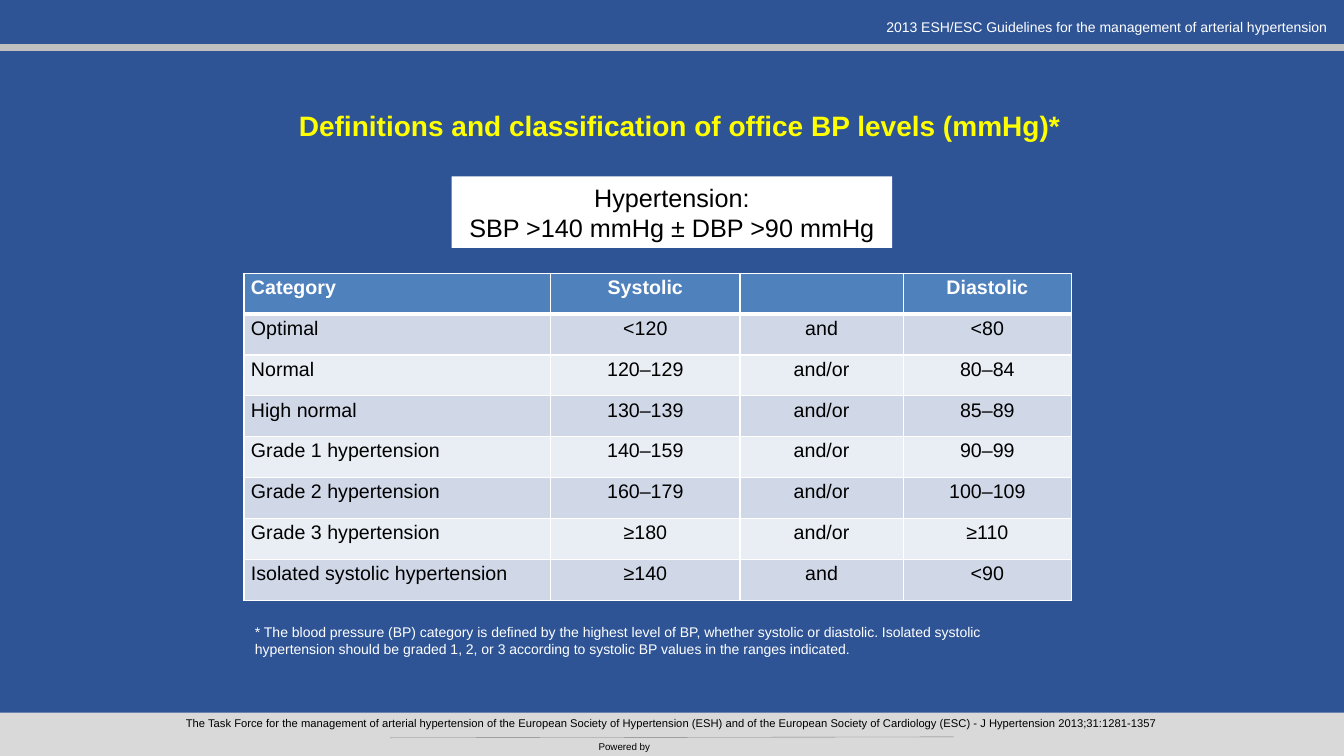
"""Slide with the definitions and classification of office blood pressure levels."""
from lxml import etree
from pptx import Presentation
from pptx.dml.color import RGBColor
from pptx.enum.shapes import MSO_CONNECTOR, MSO_SHAPE
from pptx.enum.text import MSO_ANCHOR, PP_ALIGN
from pptx.oxml.ns import qn
from pptx.util import Inches, Pt

LEFT, CENTER, RIGHT = PP_ALIGN.LEFT, PP_ALIGN.CENTER, PP_ALIGN.RIGHT
TOP, MIDDLE = MSO_ANCHOR.TOP, MSO_ANCHOR.MIDDLE
RECTANGLE, STRAIGHT = MSO_SHAPE.RECTANGLE, MSO_CONNECTOR.STRAIGHT
TITLE_ONLY = 5

NAVY = RGBColor(0x2E, 0x54, 0x96)
WHITE = RGBColor(0xFF, 0xFF, 0xFF)
BLACK = RGBColor(0x00, 0x00, 0x00)
YELLOW = RGBColor(0xFF, 0xFF, 0x00)
FOOTER_GREY = RGBColor(0xD9, 0xD9, 0xD9)
RULE_GREY = RGBColor(0xBF, 0xBF, 0xBF)
HAIRLINE_GREY = RGBColor(0x80, 0x80, 0x80)
HEADER_BLUE = RGBColor(0x4F, 0x81, 0xBD)
BAND_DARK = RGBColor(0xD0, 0xD8, 0xE8)
BAND_LIGHT = RGBColor(0xE9, 0xED, 0xF4)

deck = Presentation()
deck.slide_width, deck.slide_height = Inches(13.33), Inches(7.5)
COL, ROW = deck.slide_width / 100, deck.slide_height / 100
slide = deck.slides.add_slide(deck.slide_layouts[TITLE_ONLY])
slide.background.fill.solid()
slide.background.fill.fore_color.rgb = NAVY


def area(left, top, width, height):
    """Turn percentages of the slide into a position and size."""
    return int(left * COL), int(top * ROW), int(width * COL), int(height * ROW)


def write(frame, lines, size, color, align=LEFT, bold=False, spacing=1.0):
    """Fill a text frame with one paragraph per line."""
    formats = {"name": "Arial", "size": Pt(size), "bold": bold}
    for number, line in enumerate(lines):
        paragraph = frame.add_paragraph() if number else frame.paragraphs[0]
        paragraph.alignment, paragraph.line_spacing = align, spacing
        run = paragraph.add_run()
        run.text = line
        run.font.color.rgb = color
        for key, value in formats.items():
            setattr(run.font, key, value)


footer_band = slide.shapes.add_shape(RECTANGLE, *area(0, 94.27, 100, 5.73))
definition = slide.shapes.add_shape(RECTANGLE, *area(33.6, 23.33, 32.78, 9.47))
for panel, fill in ((footer_band, FOOTER_GREY), (definition, WHITE)):
    panel.shadow.inherit = False
    panel.fill.solid()
    panel.fill.fore_color.rgb = fill
    panel.line.fill.background()
definition.text_frame.word_wrap = False
definition.text_frame.vertical_anchor = MIDDLE
write(definition.text_frame, ["Hypertension:", "SBP >140 mmHg ± DBP >90 mmHg"],
      18, BLACK, CENTER)

rules = [
    ((0, 6.27), (100, 6.27), RULE_GREY, 4.5),
    ((29.03, 97.6), (70.95, 97.47), HAIRLINE_GREY, 0.25),
]
for (x1, y1), (x2, y2), color, weight in rules:
    rule = slide.shapes.add_connector(
        STRAIGHT, int(x1 * COL), int(y1 * ROW), int(x2 * COL), int(y2 * ROW))
    rule.line.color.rgb, rule.line.width = color, Pt(weight)
    etree.SubElement(rule._element.spPr, qn("a:effectLst"))

title = slide.shapes.title
title.left, title.top, title.width, title.height = area(17.4, 13.73, 66.38, 5.87)
title.text_frame.word_wrap = True
title.text_frame.vertical_anchor = TOP
write(title.text_frame, ["Deﬁnitions and classiﬁcation of office BP levels (mmHg)*"],
      20, YELLOW, CENTER, bold=True)

captions = [
    ((64.95, 1.73, 34.5, 3.6), 10, WHITE, RIGHT, False,
     "2013 ESH/ESC Guidelines for the management of arterial hypertension"),
    ((0, 94.13, 100, 3.2), 8, BLACK, CENTER, True,
     "The Task Force for the management of arterial hypertension of the European "
     "Society of Hypertension (ESH) and of the European Society of Cardiology (ESC) "
     "- J Hypertension 2013;31:1281-1357"),
    ((43.8, 97.33, 5.4, 2.93), 7, BLACK, LEFT, False, "Powered by"),
    ((18.23, 81.87, 61.27, 5.87), 10, WHITE, LEFT, True,
     "* The blood pressure (BP) category is defined by the highest level of BP, "
     "whether systolic or diastolic. Isolated systolic hypertension should be graded "
     "1, 2, or 3 according to systolic BP values in the ranges indicated."),
]
for place, size, color, align, wrap, words in captions:
    caption = slide.shapes.add_textbox(*area(*place)).text_frame
    caption.word_wrap = wrap
    write(caption, [words], size, color, align)

levels = [
    ("Category", "Systolic", "", "Diastolic"),
    ("Optimal", "<120", "and", "<80"),
    ("Normal", "120–129", "and/or", "80–84"),
    ("High normal", "130–139", "and/or", "85–89"),
    ("Grade 1 hypertension", "140–159", "and/or", "90–99"),
    ("Grade 2 hypertension", "160–179", "and/or", "100–109"),
    ("Grade 3 hypertension", "≥180", "and/or", "≥110"),
    ("Isolated systolic hypertension", "≥140", "and", "<90"),
]
column_shares = (22.83, 14.08, 12.15, 12.52)
grid = slide.shapes.add_table(len(levels), len(column_shares),
                              *area(18.15, 36.13, sum(column_shares), 43.33)).table
for column, share in zip(grid.columns, column_shares):
    column.width = int(share * COL)

cell_format = {"margin_left": Inches(0.07), "margin_right": Inches(0.07),
               "margin_top": 0, "margin_bottom": 0, "vertical_anchor": TOP}
for r, level in enumerate(levels):
    header = r == 0
    band = HEADER_BLUE if header else BAND_DARK if r % 2 else BAND_LIGHT
    weights = {"L": 1, "R": 1, "T": 3 if r == 1 else 1, "B": 3 if header else 1}
    for c, words in enumerate(level):
        cell = grid.cell(r, c)
        for key, value in cell_format.items():
            setattr(cell, key, value)
        for side, weight in weights.items():
            border = etree.SubElement(cell._tc.get_or_add_tcPr(), qn(f"a:ln{side}"),
                                      w=str(Pt(weight)))
            paint = etree.SubElement(border, qn("a:solidFill"))
            etree.SubElement(paint, qn("a:srgbClr"), val=str(WHITE))
        cell.fill.solid()
        cell.fill.fore_color.rgb = band
        if words:
            write(cell.text_frame, [words], 14, WHITE if header else BLACK,
                  CENTER if c else LEFT, bold=header, spacing=1.15)

deck.save("out.pptx")
